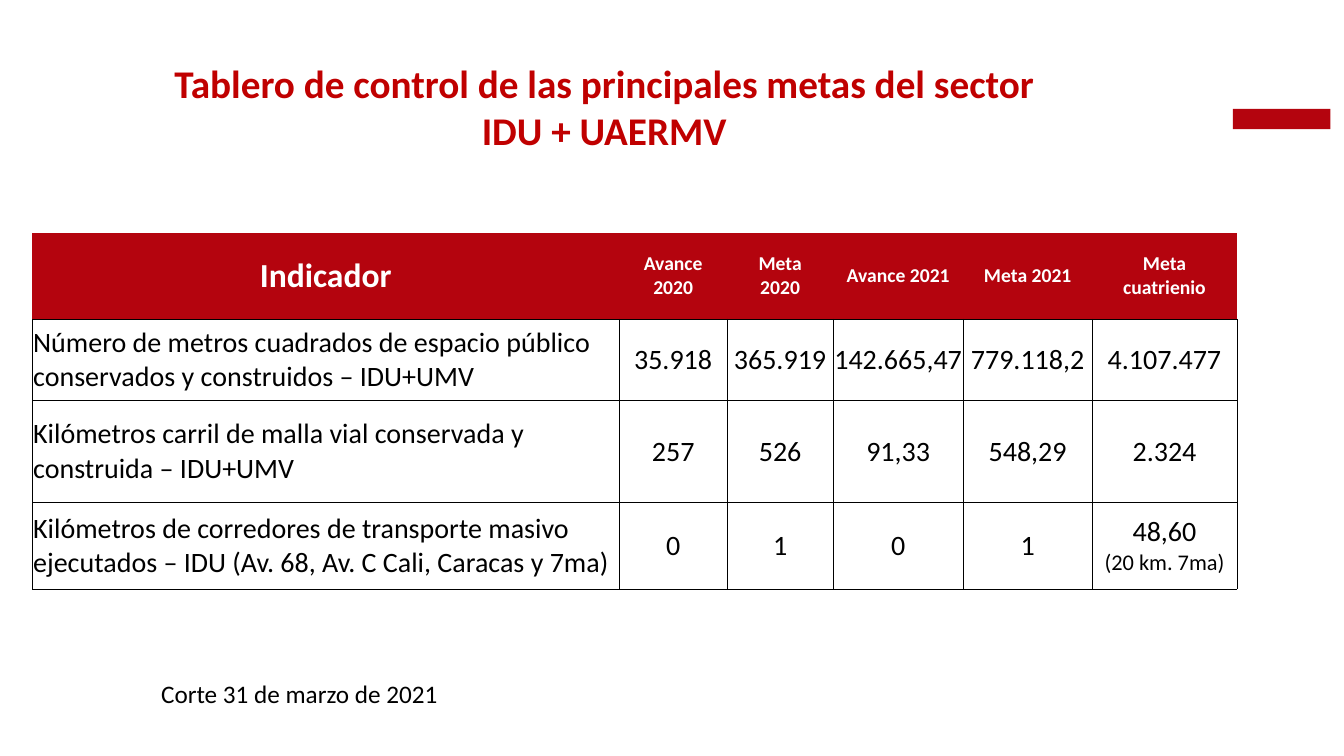
from lxml.etree import SubElement
from pptx import Presentation
from pptx.dml.color import RGBColor
from pptx.enum.shapes import MSO_SHAPE
from pptx.enum.text import MSO_ANCHOR, PP_ALIGN
from pptx.oxml.ns import qn
from pptx.util import Pt

RED, TITLE_RED, BLACK, WHITE = "B4040E", "C00000", "000000", "FFFFFF"
FONT = "Calibri"
TITLE = "Tablero de control de las principales metas del sector\nIDU + UAERMV"
NOTE = "Corte 31 de marzo de 2021"
ROWS = [
    ("Indicador", "Avance 2020", "Meta\n2020", "Avance 2021", "Meta 2021",
     "Meta cuatrienio"),
    ("Número de metros cuadrados de espacio público conservados y construidos – IDU+UMV",
     "35.918", "365.919", "142.665,47", "779.118,2", "4.107.477"),
    ("Kilómetros carril de malla vial conservada y construida – IDU+UMV",
     "257", "526", "91,33", "548,29", "2.324"),
    ("Kilómetros de corredores de transporte masivo ejecutados – IDU "
     "(Av. 68, Av. C Cali, Caracas y 7ma)",
     "0", "1", "0", "1", "48,60\n(20 km. 7ma)"),
]
COL_WIDTHS = [419.4, 77, 75.8, 92.9, 92.1, 103.4]
ROW_HEIGHTS = [61.4, 58, 72.8, 62.2]


def rgb(color):
    return RGBColor.from_string(color)


def format_paragraph(p, size, color, bold=False, align=PP_ALIGN.CENTER):
    p.alignment = align
    for r in p.runs:
        r.font.name, r.font.size, r.font.bold = FONT, Pt(size), bold
        r.font.color.rgb = rgb(color)


def set_borders(cell, color=None):
    """Draw thin lines on all four sides, or none without a colour."""
    tc_pr = cell._tc.get_or_add_tcPr()
    for i, side in enumerate(("a:lnL", "a:lnR", "a:lnT", "a:lnB")):
        line = SubElement(tc_pr, qn(side), w=str(Pt(0.25)))
        if color:
            fill = SubElement(line, qn("a:solidFill"))
            SubElement(fill, qn("a:srgbClr"), val=color)
        else:
            SubElement(line, qn("a:noFill"))
        tc_pr.insert(i, line)


prs = Presentation()
prs.slide_width, prs.slide_height = Pt(960), Pt(540)
s = prs.slides.add_slide(prs.slide_layouts[5])

# Accent bar
bar = s.shapes.add_shape(MSO_SHAPE.RECTANGLE, Pt(880.6), Pt(77.8), Pt(69.8), Pt(14.4))
bar.shadow.inherit = False
bar.fill.solid()
bar.fill.fore_color.rgb = rgb(RED)
bar.line.fill.background()

# Title
title = s.shapes.title
title.left, title.top, title.width, title.height = Pt(82), Pt(39), Pt(699), Pt(75)
tf = title.text_frame
tf.text = TITLE
tf.word_wrap = True
tf.vertical_anchor = MSO_ANCHOR.TOP
for p in tf.paragraphs:
    format_paragraph(p, 28, TITLE_RED, bold=True)

# Table of goals
table = s.shapes.add_table(len(ROWS), len(COL_WIDTHS), Pt(23), Pt(166.4),
                           Pt(sum(COL_WIDTHS)), Pt(sum(ROW_HEIGHTS))).table
table.first_row = table.horz_banding = False
for column, width in zip(table.columns, COL_WIDTHS):
    column.width = Pt(width)
for i, (row, height) in enumerate(zip(ROWS, ROW_HEIGHTS)):
    table.rows[i].height = Pt(height)
    header = i == 0
    for j, text in enumerate(row):
        cell = table.cell(i, j)
        cell.text = text
        cell.vertical_anchor = MSO_ANCHOR.MIDDLE
        cell.fill.solid()
        cell.fill.fore_color.rgb = rgb(RED if header else WHITE)
        set_borders(cell, None if header else BLACK)
        if not header:
            cell.margin_left = cell.margin_right = cell.margin_top = Pt(0.7)
            cell.margin_bottom = Pt(0)
        for p in cell.text_frame.paragraphs:
            if header:
                format_paragraph(p, 24 if j == 0 else 14, WHITE, bold=True)
            else:
                format_paragraph(p, 16 if p.text.startswith("(") else 20, BLACK,
                                 align=PP_ALIGN.CENTER if j else PP_ALIGN.LEFT)

# Cut-off date
note = s.shapes.add_textbox(Pt(108), Pt(481), Pt(356), Pt(29))
note.text_frame.word_wrap = True
note.text_frame.text = NOTE
format_paragraph(note.text_frame.paragraphs[0], 18, BLACK, align=PP_ALIGN.LEFT)

prs.save("out.pptx")
